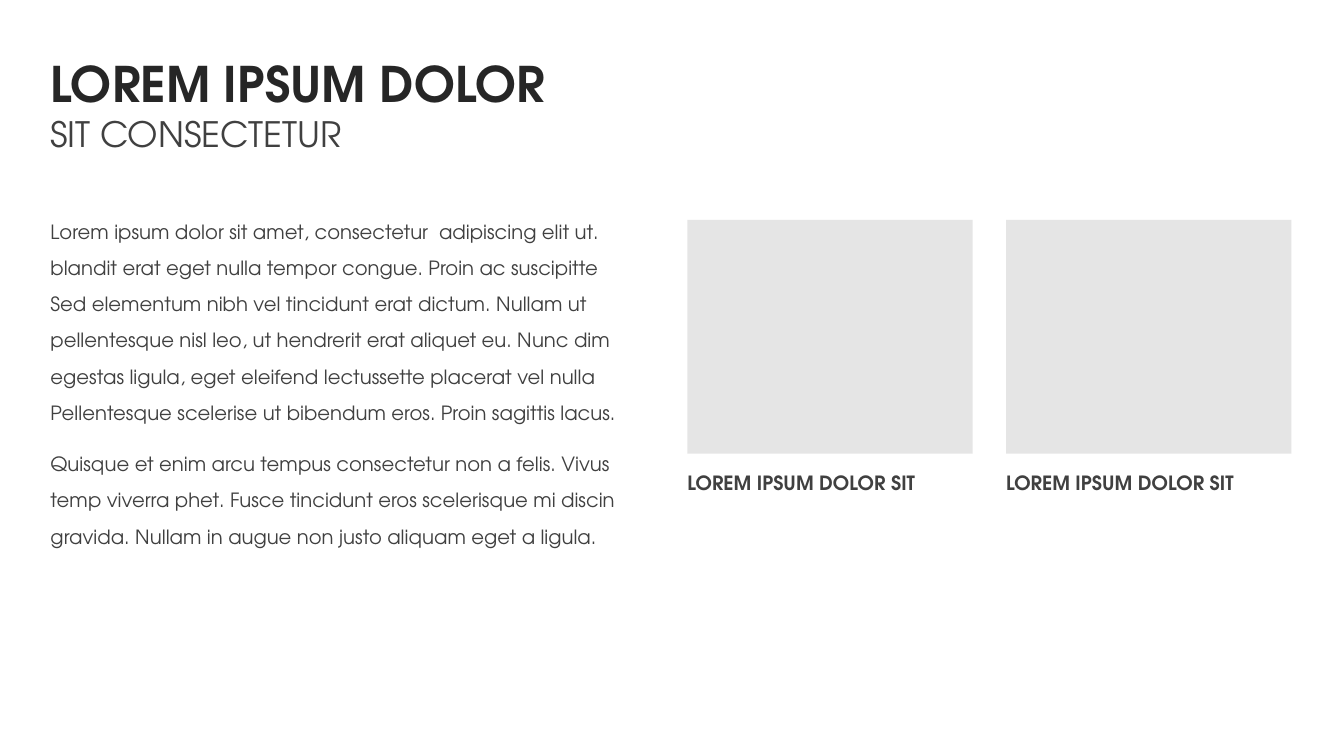
import dataclasses

import pptx
import pptx.dml.color
import pptx.enum.shapes
import pptx.enum.text
import pptx.oxml.ns
import pptx.util
from pptx.util import Pt


@dataclasses.dataclass(frozen=True)
class Theme:
    font: str = "TeX Gyre Adventor"
    dark: str = "262626"
    text: str = "404040"
    panel: str = "E5E5E5"
    title_size: int = 35
    subtitle_size: int = 25
    body_size: int = 14


THEME = Theme()

TITLE_LINES = ["LOREM IPSUM DOLOR", "SIT CONSECTETUR"]
BODY_BLOCKS = [
    [
        "Lorem ipsum dolor sit amet, consectetur  adipiscing elit ut.",
        "blandit erat eget nulla tempor congue. Proin ac suscipitte",
        "Sed elementum nibh vel tincidunt erat dictum. Nullam ut",
        "pellentesque nisl leo, ut hendrerit erat aliquet eu. Nunc dim",
        "egestas ligula, eget eleifend lectussette placerat vel nulla",
        "Pellentesque scelerise ut bibendum eros. Proin sagittis lacus.",
    ],
    [
        "Quisque et enim arcu tempus consectetur non a felis. Vivus",
        "temp viverra phet. Fusce tincidunt eros scelerisque mi discin",
        "gravida. Nullam in augue non justo aliquam eget a ligula.",
    ],
]
CAPTIONS = ["LOREM IPSUM DOLOR SIT", "LOREM IPSUM DOLOR SIT"]

# Layout in points
LEFT = 36
CONTENT_TOP = 157
PANEL_LEFT, PANEL_STEP = 491, 227.6
PANEL_WIDTH, PANEL_HEIGHT = 203.8, 167
CAPTION_TOP = 336.2


def color(code):
    return pptx.dml.color.RGBColor.from_string(code)


def place(box, left, top, width, height):
    box.left, box.top, box.width, box.height = map(Pt, (left, top, width, height))


def prepare_frame(box):
    frame = box.text_frame
    frame.margin_left = frame.margin_top = frame.margin_right = frame.margin_bottom = 0
    frame.word_wrap = True
    frame.auto_size = pptx.enum.text.MSO_AUTO_SIZE.NONE
    frame.vertical_anchor = pptx.enum.text.MSO_ANCHOR.TOP
    return frame


def format_para(para, size, code, bold=False, before=0, after=0):
    para.alignment = pptx.enum.text.PP_ALIGN.LEFT
    para.line_spacing = 1.0
    para.space_before, para.space_after = Pt(before), Pt(after)
    for span in para.runs:
        span.font.name = THEME.font
        span.font.size = Pt(size)
        span.font.bold = bold
        span.font.color.rgb = color(code)


def remove_bullet(para):
    properties = para._p.get_or_add_pPr()
    properties.set("marL", "0")
    properties.set("indent", "0")
    properties.append(properties.makeelement(pptx.oxml.ns.qn("a:buNone"), {}))


def fill_title(box):
    place(box, LEFT, 38.2, 658.8, 46.8)
    frame = prepare_frame(box)
    frame.text = "\n".join(TITLE_LINES)
    heading, subtitle = frame.paragraphs
    format_para(heading, THEME.title_size, THEME.dark, bold=True)
    format_para(subtitle, THEME.subtitle_size, THEME.text)


def fill_body(box):
    place(box, LEFT, CONTENT_TOP, 431.3, 287.3)
    frame = prepare_frame(box)
    frame.text = "\n".join(line for block in BODY_BLOCKS for line in block)
    second_block = len(BODY_BLOCKS[0])
    for index, para in enumerate(frame.paragraphs):
        before = 14 if index == second_block else 3
        format_para(para, THEME.body_size, THEME.text, before=before, after=6)
        remove_bullet(para)


def add_panel(page, left):
    panel = page.shapes.add_shape(
        pptx.enum.shapes.MSO_SHAPE.RECTANGLE,
        Pt(left), Pt(CONTENT_TOP), Pt(PANEL_WIDTH), Pt(PANEL_HEIGHT),
    )
    panel.shadow.inherit = False
    panel.fill.solid()
    panel.fill.fore_color.rgb = color(THEME.panel)
    panel.line.fill.background()


def add_caption(page, left, caption):
    box = page.shapes.add_textbox(Pt(left), Pt(CAPTION_TOP), Pt(PANEL_WIDTH), Pt(35.3))
    frame = prepare_frame(box)
    frame.text = caption
    format_para(frame.paragraphs[0], THEME.body_size, THEME.text, bold=True, before=3, after=6)


def main():
    deck = pptx.Presentation()
    deck.slide_width, deck.slide_height = Pt(960), Pt(540)
    page = deck.slides.add_slide(deck.slide_layouts[1])

    # Title and body text
    fill_title(page.shapes.title)
    fill_body(page.placeholders[1])

    # Captioned panels
    for index, caption in enumerate(CAPTIONS):
        left = PANEL_LEFT + index * PANEL_STEP
        add_panel(page, left)
        add_caption(page, left, caption)

    deck.save("out.pptx")


if __name__ == "__main__":
    main()
